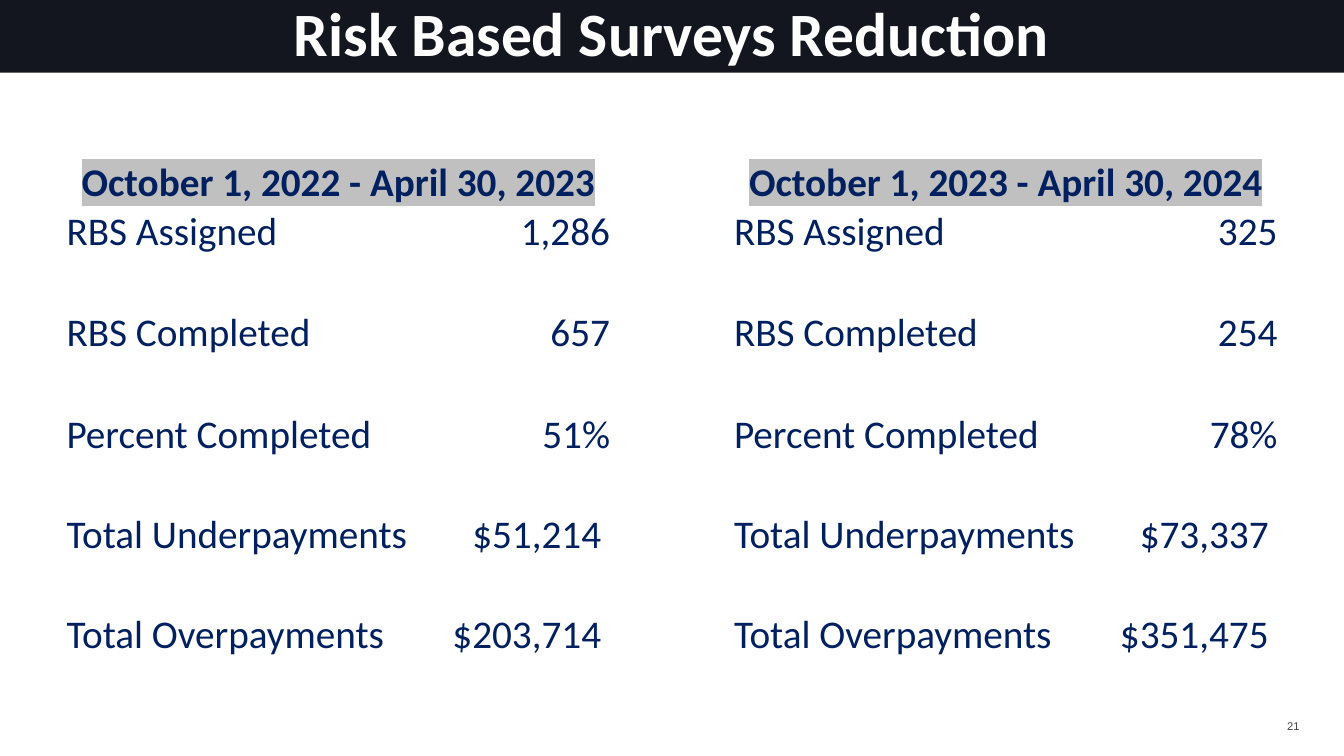
from dataclasses import dataclass

from lxml.etree import SubElement
from pptx import Presentation
from pptx.dml.color import RGBColor as Rgb
from pptx.enum.shapes import MSO_SHAPE as Shape
from pptx.enum.text import MSO_ANCHOR as Anchor, PP_ALIGN as Align
from pptx.oxml.ns import qn
from pptx.util import Pt

PX = 9144  # EMU; 100 px to the inch


@dataclass(frozen=True)
class Theme:
    band: str = "13161E"
    light: str = "FFFFFF"
    navy: str = "002060"
    mark: str = "C0C0C0"
    black: str = "000000"
    font: str = "Calibri"
    small: str = "Arial"
    head: int = 44
    body: int = 28
    note: int = 8


class Deck:
    def __init__(self, theme):
        self.theme = theme
        self.prs = Presentation()
        self.prs.slide_width, self.prs.slide_height = 1333 * PX, 750 * PX
        self.slide = self.prs.slides.add_slide(self.prs.slide_layouts[6])

    def style(self, para, size, color, align, bold=False, font=None):
        para.alignment = align
        run = para.runs[0]
        run.font.size, run.font.bold = Pt(size), bold
        run.font.name = font or self.theme.font
        run.font.color.rgb = Rgb.from_string(color)
        return run

    def tint(self, run, alpha):
        """Set the opacity of the run's colour, in percent."""
        color = run.font.fill._xPr.find(qn("a:solidFill"))[0]
        SubElement(color, qn("a:alpha"), val=str(alpha * 1000))

    def shade(self, run, color):
        """Put a highlight behind the run; it must follow the fill."""
        props = run._r.get_or_add_rPr()
        mark = SubElement(props, qn("a:highlight"))
        SubElement(mark, qn("a:srgbClr"), val=color)
        props.find(qn("a:solidFill")).addnext(mark)

    def rect(self, box, color):
        shape = self.slide.shapes.add_shape(
            Shape.RECTANGLE, *(n * PX for n in box))
        shape.shadow.inherit = False
        shape.fill.solid()
        shape.fill.fore_color.rgb = Rgb.from_string(color)
        shape.line.fill.background()

    def text(self, box, words, *look, **more):
        frame = self.slide.shapes.add_textbox(
            *(n * PX for n in box)).text_frame
        frame.word_wrap = True
        frame.vertical_anchor = Anchor.MIDDLE
        frame.margin_left = frame.margin_right = 0
        frame.margin_top = frame.margin_bottom = 0
        frame.text = words
        return self.style(frame.paragraphs[0], *look, **more)

    def cell(self, cell, words, align, anchor=Anchor.MIDDLE, bold=False):
        cell.margin_left = cell.margin_right = cell.margin_top = PX
        cell.margin_bottom = 0
        cell.vertical_anchor = anchor
        cell.text_frame.text = words
        return self.style(cell.text_frame.paragraphs[0], self.theme.body,
                          self.theme.navy, align, bold)

    def table(self, left, top, period, labels, values):
        """Place a period heading with a label and value on every other row."""
        widths, step = (375, 166), 50
        count = 2 * len(labels)
        grid = self.slide.shapes.add_table(
            count, 2, left * PX, top * PX,
            sum(widths) * PX, count * step * PX).table
        grid.first_row = grid.horz_banding = False
        for col, width in zip(grid.columns, widths):
            col.width = width * PX
        for cell in grid.iter_cells():
            cell.fill.background()
        grid.cell(0, 0).merge(grid.cell(0, 1))
        run = self.cell(grid.cell(0, 0), period, Align.CENTER,
                        Anchor.BOTTOM, True)
        self.shade(run, self.theme.mark)
        for i, (label, value) in enumerate(zip(labels, values)):
            row = 2 * i + 1
            anchor = Anchor.BOTTOM if value.endswith("%") else Anchor.MIDDLE
            self.cell(grid.cell(row, 0), label, Align.LEFT, anchor)
            self.cell(grid.cell(row, 1), value, Align.RIGHT, anchor)


LABELS = ("RBS Assigned", "RBS Completed", "Percent Completed",
          "Total Underpayments", "Total Overpayments")
PERIODS = (
    (727, "October 1, 2023 - April 30, 2024",
     ("325", "254", "78%", "$73,337 ", "$351,475 ")),
    (65, "October 1, 2022 - April 30, 2023",
     ("1,286", "657", "51%", "$51,214 ", "$203,714 ")),
)


def main():
    theme = Theme()
    deck = Deck(theme)
    page = deck.text((1247, 709, 42, 23), "21", theme.note, theme.black,
                     Align.RIGHT, font=theme.small)
    deck.tint(page, 75)
    top = (0, -8, 1333, 80)
    deck.rect(top, theme.band)
    deck.text(top, "Risk Based Surveys Reduction", theme.head, theme.light,
              Align.CENTER, bold=True)
    for left, period, values in PERIODS:
        deck.table(left, 155, period, LABELS, values)
    deck.prs.save("out.pptx")


if __name__ == "__main__":
    main()
